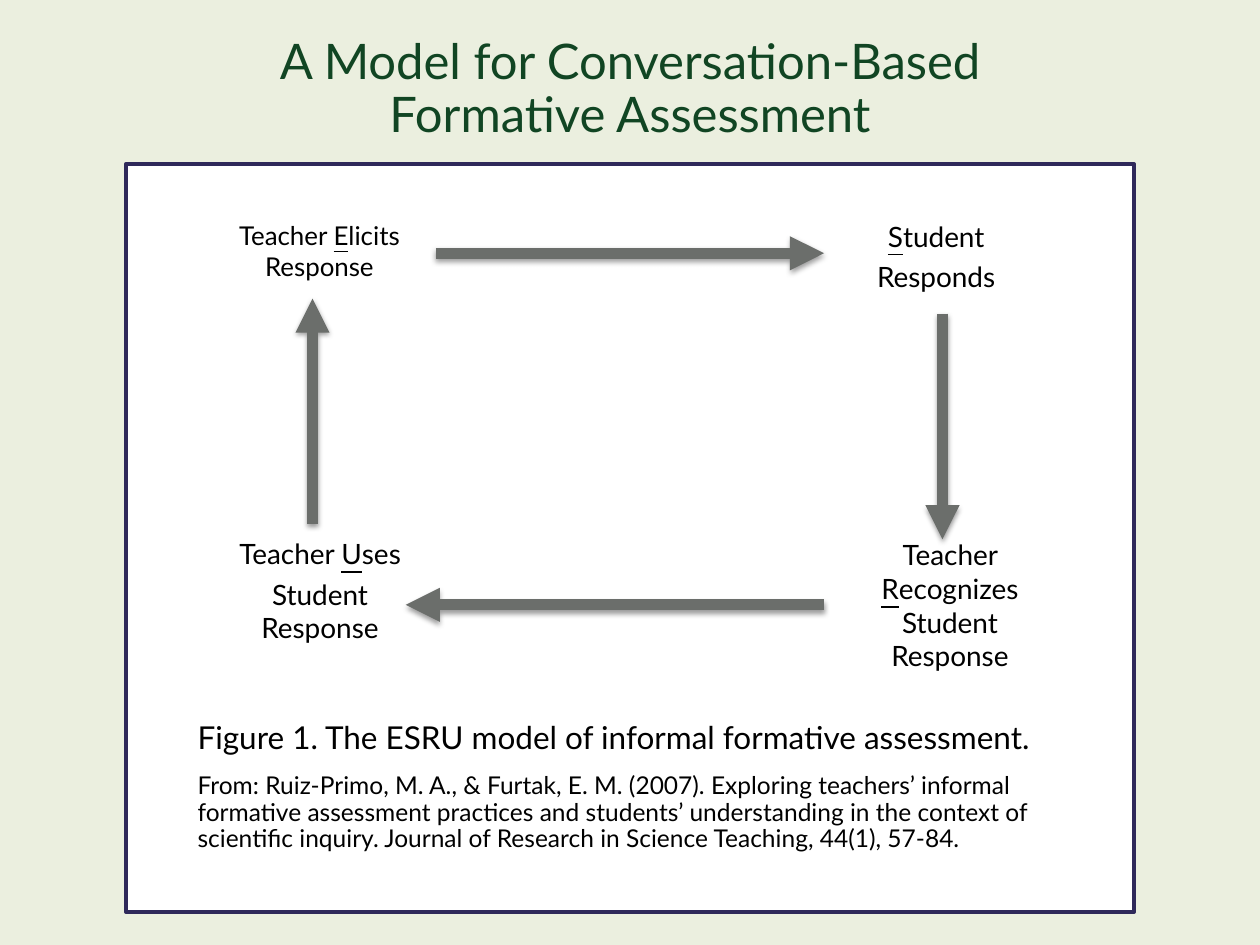
from lxml import etree
from pptx import Presentation
from pptx.dml.color import RGBColor
from pptx.enum.dml import MSO_LINE
from pptx.enum.shapes import MSO_CONNECTOR, MSO_SHAPE
from pptx.enum.text import MSO_ANCHOR, MSO_AUTO_SIZE, PP_ALIGN
from pptx.oxml.ns import qn
from pptx.util import Inches, Pt

LEFT, CENTER = PP_ALIGN.LEFT, PP_ALIGN.CENTER
TOP, MIDDLE = MSO_ANCHOR.TOP, MSO_ANCHOR.MIDDLE
NO_FIT = MSO_AUTO_SIZE.NONE
RECT, STRAIGHT, SOLID = MSO_SHAPE.RECTANGLE, MSO_CONNECTOR.STRAIGHT, MSO_LINE.SOLID

THEME = {
    "font": "Lato",
    "back": "EBEFDF", "panel": "FFFFFF", "frame": "2F295A",
    "title": "114523", "text": "000000", "arrow": "6B6E6B",
    "title_pt": 28, "step_pt": 16, "small_pt": 14.8, "figure_pt": 18, "source_pt": 14,
    "frame_pt": 2, "arrow_pt": 6.5,
}

TITLE = "A Model for Conversation-Based Formative Assessment"
TITLE_BOX = (1.33, -0.01, 7.34, 1.45)
PANEL_BOX = (1, 1.3, 8, 5.94)

# Each step: box, type size, paragraphs of (before, underlined letter, after)
STEPS = [
    ((1.42, 1.69, 2.11, 0.67), "small_pt", [("Teacher ", "E", "licits Response")]),
    ((6.56, 1.69, 1.62, 0.89), "step_pt", [("", "S", "tudent"), ("Responds", "", "")]),
    ((6.5, 4.22, 1.96, 1.19), "step_pt", [("Teacher ", "R", "ecognizes Student Response")]),
    ((1.54, 4.21, 1.88, 1.21), "step_pt",
     [("Teacher ", "U", "ses"), ("Student Response", "", "")]),
]

# Tail point, then head point, clockwise from the top
ARROWS = [
    (3.46, 2.01, 6.54, 2.01),
    (7.48, 2.49, 7.48, 4.28),
    (6.54, 4.8, 3.22, 4.8),
    (2.48, 4.16, 2.48, 2.37),
]

NOTE_BOX = (1.35, 5.68, 7.34, 1.38)
NOTES = [
    ("figure_pt", "Figure 1. The ESRU model of informal formative assessment."),
    ("source_pt", "From: Ruiz-Primo, M. A., & Furtak, E. M. (2007). Exploring teachers’ informal "
     "formative assessment practices and students’ understanding in the context of "
     "scientific inquiry. Journal of Research in Science Teaching, 44(1), 57-84."),
]


def color(name):
    return RGBColor.from_string(THEME[name])


def inches(box):
    return [Inches(n) for n in box]


def add_run(para, text, size, tint="text", under=False):
    run = para.add_run()
    run.text = text
    font = run.font
    font.name, font.size = THEME["font"], Pt(THEME[size])
    font.color.rgb = color(tint)
    if under:
        font.underline = True


def set_frame(frame, anchor):
    frame.word_wrap = True
    frame.auto_size = NO_FIT
    frame.vertical_anchor = anchor
    frame.margin_left = frame.margin_right = Inches(0.1)
    frame.margin_top = frame.margin_bottom = Inches(0.05)


def add_text(slide, box, paras, align, gap, spacing):
    """Add a box of paragraphs, each a list of (text, size, underlined) runs."""
    frame = slide.shapes.add_textbox(*inches(box)).text_frame
    set_frame(frame, TOP)
    for i, runs in enumerate(paras):
        para = frame.add_paragraph() if i else frame.paragraphs[0]
        props = para._p.get_or_add_pPr()
        props.set("marL", str(Inches(0.12)))
        props.set("indent", "0")
        para.alignment, para.line_spacing = align, spacing
        if i:
            para.space_before = Pt(gap)
        for text, size, under in runs:
            if text:
                add_run(para, text, size, under=under)


def add_arrow(slide, ends):
    arrow = slide.shapes.add_connector(STRAIGHT, *inches(ends))
    line = arrow.line
    line.color.rgb, line.width = color("arrow"), Pt(THEME["arrow_pt"])
    line.dash_style = SOLID
    props = arrow._element.spPr
    etree.SubElement(props.find(qn("a:ln")), qn("a:tailEnd"), type="triangle")
    effects = etree.SubElement(props, qn("a:effectLst"))
    shadow = etree.SubElement(effects, qn("a:outerShdw"), blurRad=str(Pt(3.1)),
                              dist=str(Pt(1.6)), dir="5400000", rotWithShape="0")
    black = etree.SubElement(shadow, qn("a:srgbClr"), val="000000")
    etree.SubElement(black, qn("a:alpha"), val="38000")


def add_title(slide):
    title = slide.shapes.title
    title.left, title.top, title.width, title.height = inches(TITLE_BOX)
    set_frame(title.text_frame, MIDDLE)
    para = title.text_frame.paragraphs[0]
    para.alignment, para.line_spacing = CENTER, 0.9
    add_run(para, TITLE, "title_pt", "title")


def add_panel(slide):
    panel = slide.shapes.add_shape(RECT, *inches(PANEL_BOX))
    panel.shadow.inherit = False
    panel.fill.solid()
    panel.fill.fore_color.rgb = color("panel")
    panel.line.color.rgb, panel.line.width = color("frame"), Pt(THEME["frame_pt"])


def main():
    deck = Presentation()
    deck.slide_width, deck.slide_height = Inches(10), Inches(7.5)
    slide = deck.slides.add_slide(deck.slide_layouts.get_by_name("Title Only"))
    slide.background.fill.solid()
    slide.background.fill.fore_color.rgb = color("back")

    add_title(slide)
    add_panel(slide)
    for ends in ARROWS:
        add_arrow(slide, ends)
    for box, size, lines in STEPS:
        paras = [[(pre, size, False), (key, size, True), (post, size, False)]
                 for pre, key, post in lines]
        add_text(slide, box, paras, CENTER, 4, 1.0)
    add_text(slide, NOTE_BOX, [[(text, size, False)] for size, text in NOTES], LEFT, 10, 0.9)

    deck.save("out.pptx")


if __name__ == "__main__":
    main()
